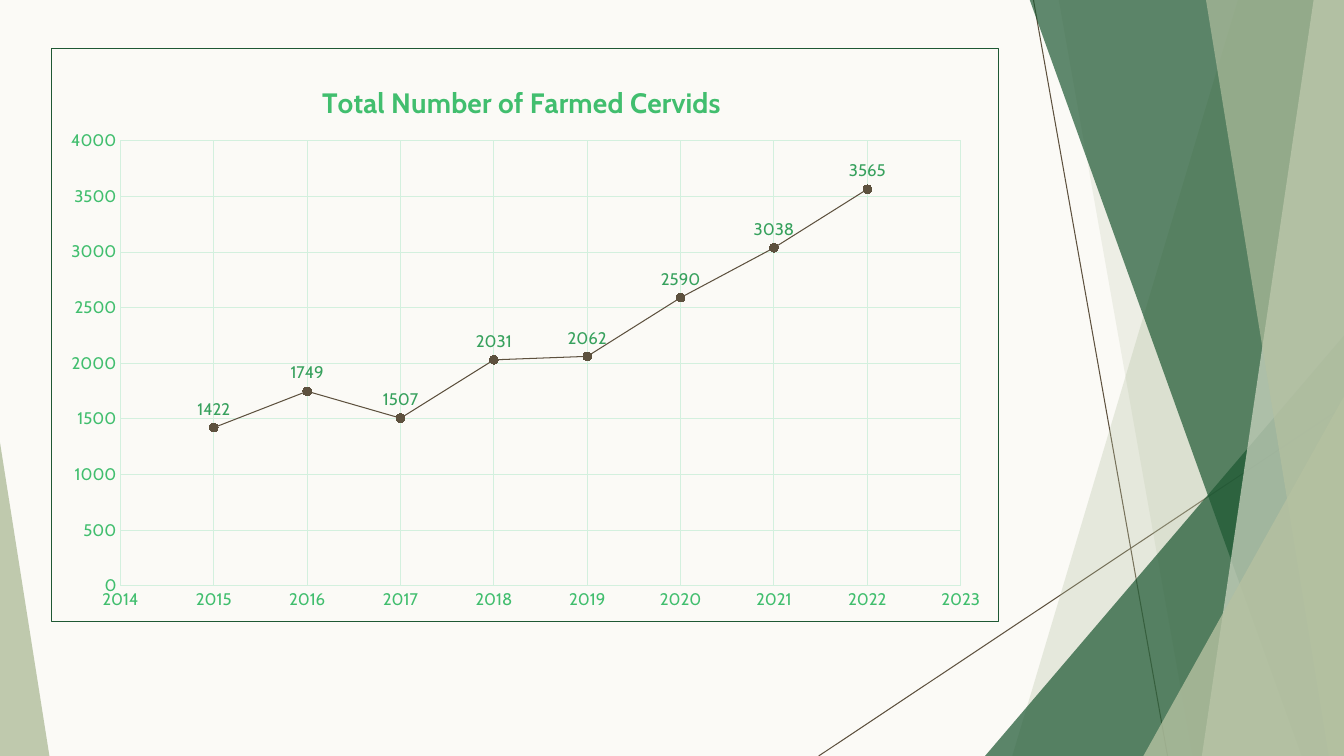
from lxml import etree
from pptx import Presentation
from pptx.chart.data import XyChartData
from pptx.chart.datalabel import DataLabels
from pptx.dml.color import RGBColor
from pptx.enum.chart import XL_CHART_TYPE as ChartType, XL_LABEL_POSITION as LabelPosition
from pptx.enum.chart import XL_MARKER_STYLE as MarkerStyle, XL_TICK_MARK as TickMark
from pptx.enum.shapes import MSO_CONNECTOR as Connector, MSO_SHAPE as Shape
from pptx.oxml import parse_xml
from pptx.oxml.ns import nsdecls, qn
from pptx.util import Inches, Pt

# Content
TITLE = "Total Number of Farmed Cervids"
CERVIDS = {2015: 1422, 2016: 1749, 2017: 1507, 2018: 2031,
           2019: 2062, 2020: 2590, 2021: 3038, 2022: 3565}
FONT = "Cabin"

# Colours
CREAM = RGBColor(0xFB, 0xFA, 0xF6)
BROWN = RGBColor(0x5D, 0x51, 0x3E)
DARK_BROWN = RGBColor(0x55, 0x4A, 0x39)
FOREST = RGBColor(0x1E, 0x58, 0x33)
SAGE = RGBColor(0xB5, 0xC1, 0xA1)
PALE_SAGE = RGBColor(0xD3, 0xDA, 0xC7)
GREEN = RGBColor(0x41, 0xBE, 0x6E)
LABEL_GREEN = RGBColor(0x37, 0xA1, 0x5D)
MINT = RGBColor(0xD3, 0xF0, 0xDE)

# Decoration, in inches from back to front
WIDTH, HEIGHT, TOP = 13.33, 7.5, -0.01
RULES = [(10.25, 0, 11.58, HEIGHT), (WIDTH, 4.03, 8.12, HEIGHT)]
# band: top left x, bottom left x, colour, opacity; it reaches the right edge
# triangle: left, top, width, apex position, colour, opacity; it stands on the bottom edge
FACETS = [
    ("band", 12.28, 10.04, SAGE, 30),
    ("band", 10.5, 11.83, SAGE, 20),
    ("triangle", 9.77, 3.33, 3.56, 1, FOREST, 72),
    ("band", 10.21, 12.91, FOREST, 70),
    ("band", 13.03, 11.92, PALE_SAGE, 70),
    ("band", 11.96, 13.18, SAGE, 65),
    ("triangle", 11.34, 3.93, 1.99, 1, SAGE, 80),
    ("triangle", 0, 4.39, 0.49, 0, SAGE, 85),
]

# Chart frame in inches, layouts as fractions of it
CHART_BOX = (0.51, 0.48, 9.4, 5.69)
TITLE_SPOT = {"x": 0.28, "y": 0.05}
PLOT_SPOT = {"x": 0.0724, "y": 0.1606, "w": 0.8876, "h": 0.7775}


def add_rule(page, ends):
    rule = page.shapes.add_connector(Connector.STRAIGHT, *map(Inches, ends))
    rule.line.color.rgb = BROWN
    rule.line.width = Pt(0.75)
    etree.SubElement(rule.element.spPr, qn("a:effectLst"))


def add_band(page, top_x, bottom_x):
    corners = [(WIDTH, TOP), (WIDTH, HEIGHT), (bottom_x, HEIGHT)]
    builder = page.shapes.build_freeform(Inches(top_x), Inches(TOP))
    builder.add_line_segments([(Inches(x), Inches(y)) for x, y in corners])
    return builder.convert_to_shape()


def add_triangle(page, left, top, width, apex):
    box = map(Inches, (left, top, width, HEIGHT - top))
    triangle = page.shapes.add_shape(Shape.ISOSCELES_TRIANGLE, *box)
    triangle.adjustments[0] = apex
    return triangle


def paint(shape, colour, opacity):
    shape.shadow.inherit = False
    shape.line.fill.background()
    shape.fill.solid()
    shape.fill.fore_color.rgb = colour
    tint = shape.element.spPr.find(qn("a:solidFill"))[0]
    etree.SubElement(tint, qn("a:alpha")).set("val", str(opacity * 1000))


def style_font(font, size, colour, bold=False):
    font.name = FONT
    font.size = Pt(size)
    font.bold = bold
    font.color.rgb = colour


def style_axis(axis, low, high, step):
    axis.minimum_scale, axis.maximum_scale, axis.major_unit = low, high, step
    axis.major_tick_mark = axis.minor_tick_mark = TickMark.NONE
    axis.format.line.fill.background()
    axis.has_major_gridlines = True
    axis.major_gridlines.format.line.color.rgb = MINT
    axis.major_gridlines.format.line.width = Pt(0.75)
    axis.tick_labels.number_format = "0"
    axis.tick_labels.number_format_is_linked = False
    style_font(axis.tick_labels.font, 12, GREEN)


def place(element, spot, inner=False):
    """Give a chart part a fixed layout."""
    for old in element.findall(qn("c:layout")):
        element.remove(old)
    target = '<c:layoutTarget val="inner"/>' if inner else ""
    modes = "".join(f'<c:{key}Mode val="edge"/>' for key in "xy")
    sizes = "".join(f'<c:{key} val="{value}"/>' for key, value in spot.items())
    layout = parse_xml(f'<c:layout {nsdecls("c")}><c:manualLayout>{target}{modes}{sizes}'
                       "</c:manualLayout></c:layout>")
    text = element.find(qn("c:tx"))
    if text is None:
        element.insert(0, layout)
    else:
        text.addnext(layout)


def add_cervid_chart(page):
    data = XyChartData()
    points = data.add_series("Series 1")
    for year, count in CERVIDS.items():
        points.add_data_point(year, count)
    frame = page.shapes.add_chart(ChartType.XY_SCATTER_LINES, *map(Inches, CHART_BOX), data)
    chart = frame.chart
    root = chart.element.find(qn("c:chart"))
    chart.has_legend = False
    style_font(chart.font, 10, FOREST)

    # Title and axes
    chart.has_title = True
    para = chart.chart_title.text_frame.paragraphs[0]
    para.text = TITLE
    style_font(para.runs[0].font, 20, GREEN, bold=True)
    style_axis(chart.category_axis, min(CERVIDS) - 1, max(CERVIDS) + 1, 1)
    style_axis(chart.value_axis, 0, 4000, 500)

    # Series
    plot = chart.plots[0]
    plot.vary_by_categories = False
    series = plot.series[0]
    series.format.line.color.rgb = BROWN
    series.format.line.width = Pt(0.75)
    marker = series.marker
    marker.style, marker.size = MarkerStyle.CIRCLE, 6
    marker.format.fill.solid()
    marker.format.fill.fore_color.rgb = BROWN
    marker.format.line.color.rgb = DARK_BROWN
    labels = DataLabels(next(root.iter(qn("c:ser"))).get_or_add_dLbls())
    labels.show_value = True
    labels.position = LabelPosition.ABOVE
    style_font(labels.font, 12, LABEL_GREEN)

    # Layout and border
    place(root.find(qn("c:title")), TITLE_SPOT)
    place(root.find(qn("c:plotArea")), PLOT_SPOT, inner=True)
    root.addnext(parse_xml(
        f'<c:spPr {nsdecls("c", "a")}><a:noFill/><a:ln w="{Pt(0.75)}"><a:solidFill>'
        f'<a:srgbClr val="{FOREST}"/></a:solidFill></a:ln></c:spPr>'))


def main():
    deck = Presentation()
    deck.slide_width, deck.slide_height = Inches(WIDTH), Inches(HEIGHT)
    page = deck.slides.add_slide(deck.slide_layouts[6])
    page.background.fill.solid()
    page.background.fill.fore_color.rgb = CREAM

    for ends in RULES:
        add_rule(page, ends)
    makers = {"band": add_band, "triangle": add_triangle}
    for kind, *geometry, colour, opacity in FACETS:
        paint(makers[kind](page, *geometry), colour, opacity)
    add_cervid_chart(page)
    deck.save("out.pptx")


if __name__ == "__main__":
    main()
